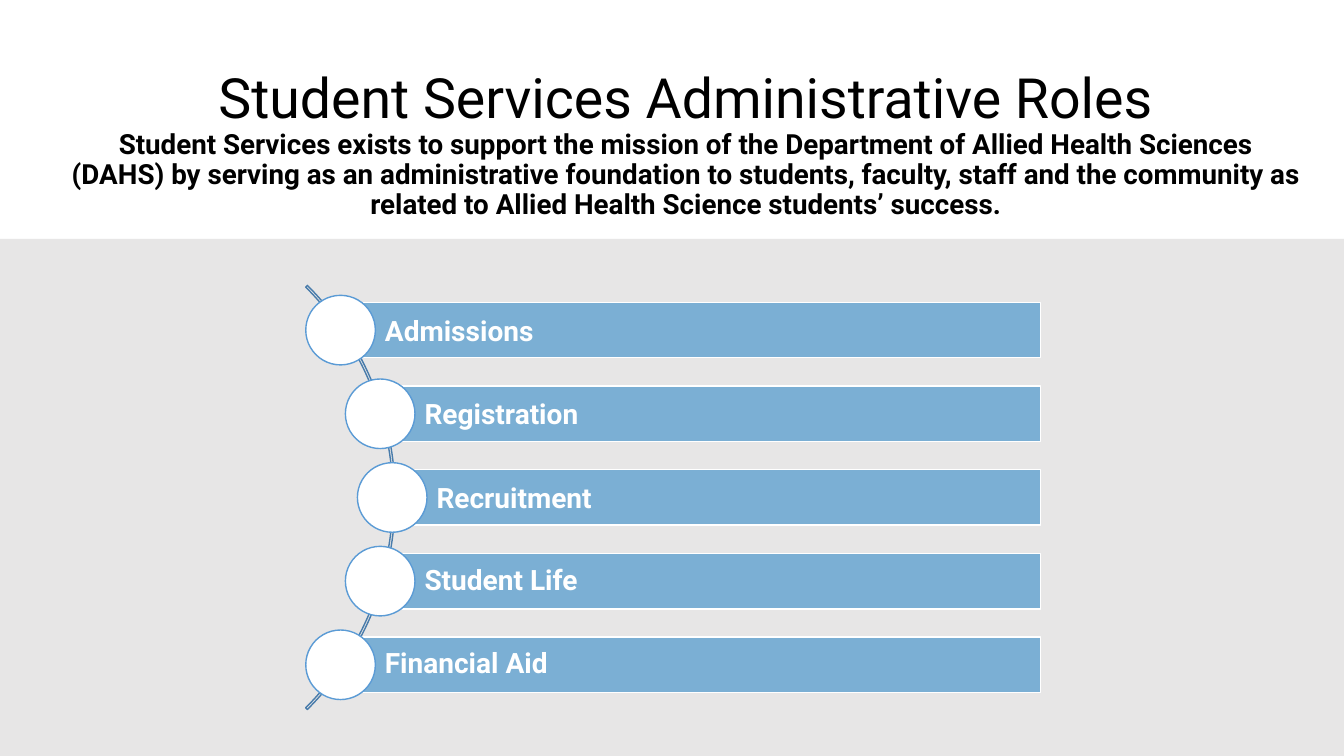
from dataclasses import dataclass
from math import sqrt

from pptx import Presentation
from pptx import util as u
from pptx.dml.color import RGBColor
from pptx.enum import shapes, text

COLORS = {
    "panel": "E7E6E6", "bar": "7BAFD4", "white": "FFFFFF",
    "ring": "5B9BD5", "arc": "497CAB", "black": "000000",
}
FONT = "Roboto"

# Arc geometry in inches: the circles sit along its right-hand side
ARC_X, ARC_Y, ARC_SIZE = 0.945, 4.935, 5.95
TRACK_RADIUS = 2.945
ROW_STEP, BAR_HEIGHT, BAR_RIGHT, CIRCLE = 0.83, 0.55, 10.32, 0.69


@dataclass
class Role:
    name: str
    line_spacing: float = 1.0


ROLES = [
    Role("Admissions"),
    Role("Registration"),
    Role("Recruitment"),
    Role("Student Life", 0.9),
    Role("Financial Aid", 0.9),
]


def set_format(target: object, values: dict) -> None:
    for name, value in values.items():
        setattr(target, name, value)


def rgb(name: str) -> RGBColor:
    return RGBColor.from_string(COLORS[name])


def add_box(s, kind, left: float, top: float, width: float, height: float,
            fill: str = "", line: str = ""):
    sp = s.shapes.add_shape(kind, u.Inches(left), u.Inches(top),
                            u.Inches(width), u.Inches(height))
    sp.shadow.inherit = False
    if fill:
        sp.fill.solid()
        sp.fill.fore_color.rgb = rgb(fill)
    else:
        sp.fill.background()
    if line:
        sp.line.color.rgb = rgb(line)
        sp.line.width = u.Pt(1)
    else:
        sp.line.fill.background()
    return sp


def add_run(p, words: str, size: float, color: str, bold: bool) -> None:
    r = p.add_run()
    r.text = words
    set_format(r.font, {"name": FONT, "size": u.Pt(size), "bold": bold})
    r.font.color.rgb = rgb(color)


def add_title(s) -> None:
    sp = s.shapes.add_textbox(u.Inches(0.59), u.Inches(1.12),
                              u.Inches(12.42), u.Inches(1.25))
    tf = sp.text_frame
    # The deep bottom margin lifts the text above the panel
    set_format(tf, {"word_wrap": True, "margin_bottom": u.Inches(0.65),
                    "vertical_anchor": text.MSO_ANCHOR.MIDDLE})
    p = tf.paragraphs[0]
    set_format(p, {"alignment": text.PP_ALIGN.CENTER, "line_spacing": 0.9})
    add_run(p, "Student Services Administrative Roles", 39.6, "black", False)
    p.add_line_break()
    add_run(p, "Student Services exists to support the mission of the "
               "Department of Allied Health Sciences (DAHS) by serving as an "
               "administrative foundation to students, faculty, staff and the "
               "community as related to Allied Health Science students’ "
               "success.", 19.8, "black", True)


def add_role(s, role: Role, offset: float) -> None:
    """Draw a bar and its circle, offset vertically from the arc centre."""
    x = ARC_X + sqrt(TRACK_RADIUS ** 2 - offset ** 2)
    y = ARC_Y + offset
    bar = add_box(s, shapes.MSO_SHAPE.RECTANGLE, x, y - BAR_HEIGHT / 2,
                  BAR_RIGHT - x, BAR_HEIGHT, "bar", "white")
    tf = bar.text_frame
    margin = u.Inches(0.06)
    set_format(tf, {"margin_left": u.Inches(0.44), "margin_right": margin,
                    "margin_top": margin, "margin_bottom": margin,
                    "word_wrap": True,
                    "vertical_anchor": text.MSO_ANCHOR.MIDDLE})
    p = tf.paragraphs[0]
    set_format(p, {"alignment": text.PP_ALIGN.LEFT,
                   "line_spacing": role.line_spacing})
    add_run(p, role.name, 20, "white", True)
    add_box(s, shapes.MSO_SHAPE.OVAL, x - CIRCLE / 2, y - CIRCLE / 2,
            CIRCLE, CIRCLE, "white", "ring")


def main() -> None:
    prs = Presentation()
    set_format(prs, {"slide_width": u.Inches(13.33),
                     "slide_height": u.Inches(7.5)})
    s = prs.slides.add_slide(prs.slide_layouts[6])

    # Panel and heading
    add_box(s, shapes.MSO_SHAPE.RECTANGLE, 0, 2.37, 13.33, 5.13, "panel")
    add_title(s)

    # Thin arc from 315 to 45 degrees
    arc = add_box(s, shapes.MSO_SHAPE.BLOCK_ARC, ARC_X - ARC_SIZE / 2,
                  ARC_Y - ARC_SIZE / 2, ARC_SIZE, ARC_SIZE, line="arc")
    for i, value in enumerate((189, 27, 0.004)):
        arc.adjustments[i] = value

    # Roles spread evenly around the arc centre
    middle = len(ROLES) // 2
    for i, role in enumerate(ROLES):
        add_role(s, role, (i - middle) * ROW_STEP)

    prs.save("out.pptx")


if __name__ == "__main__":
    main()
